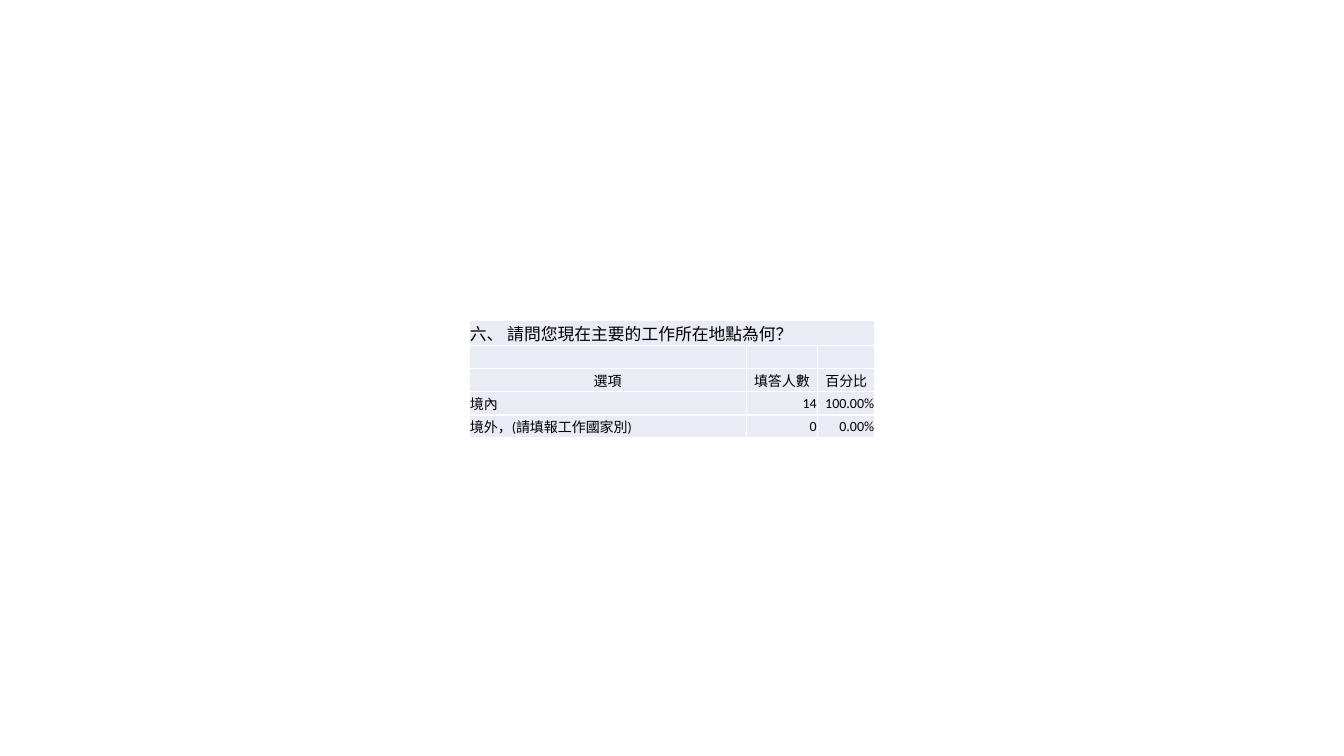
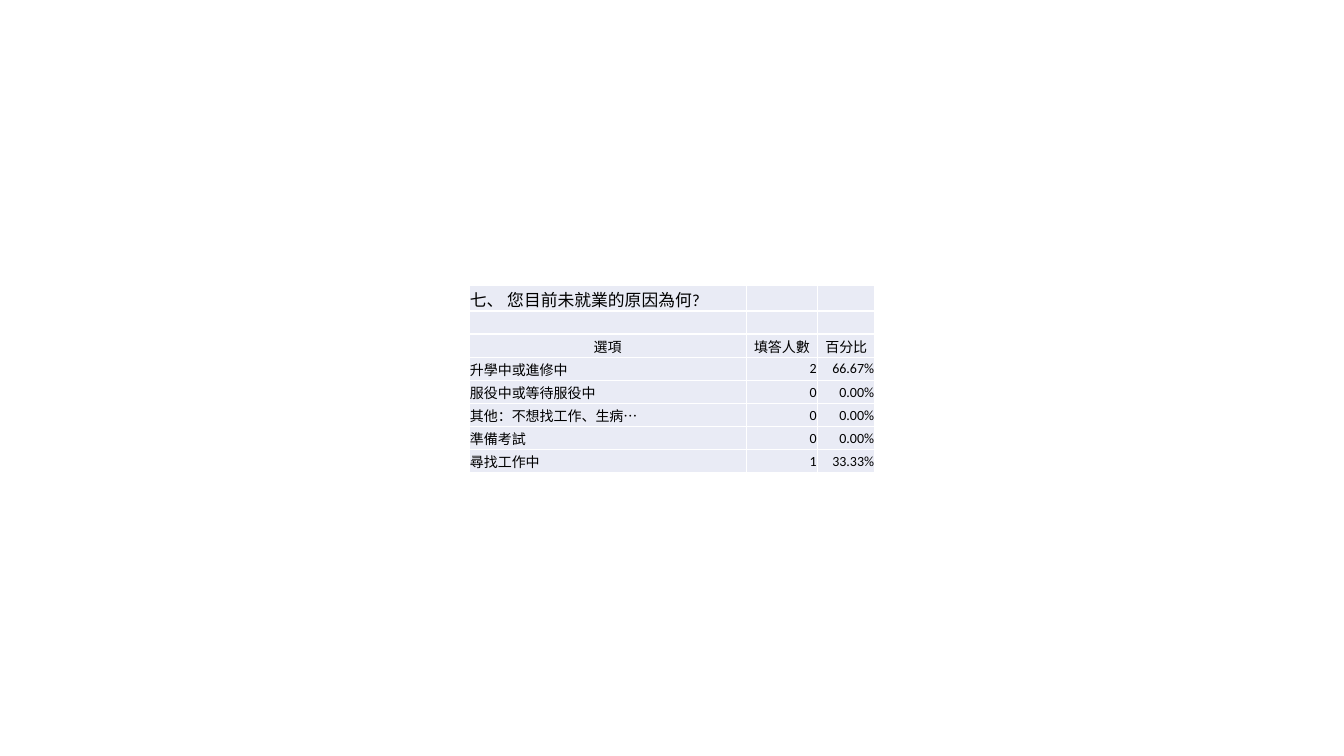
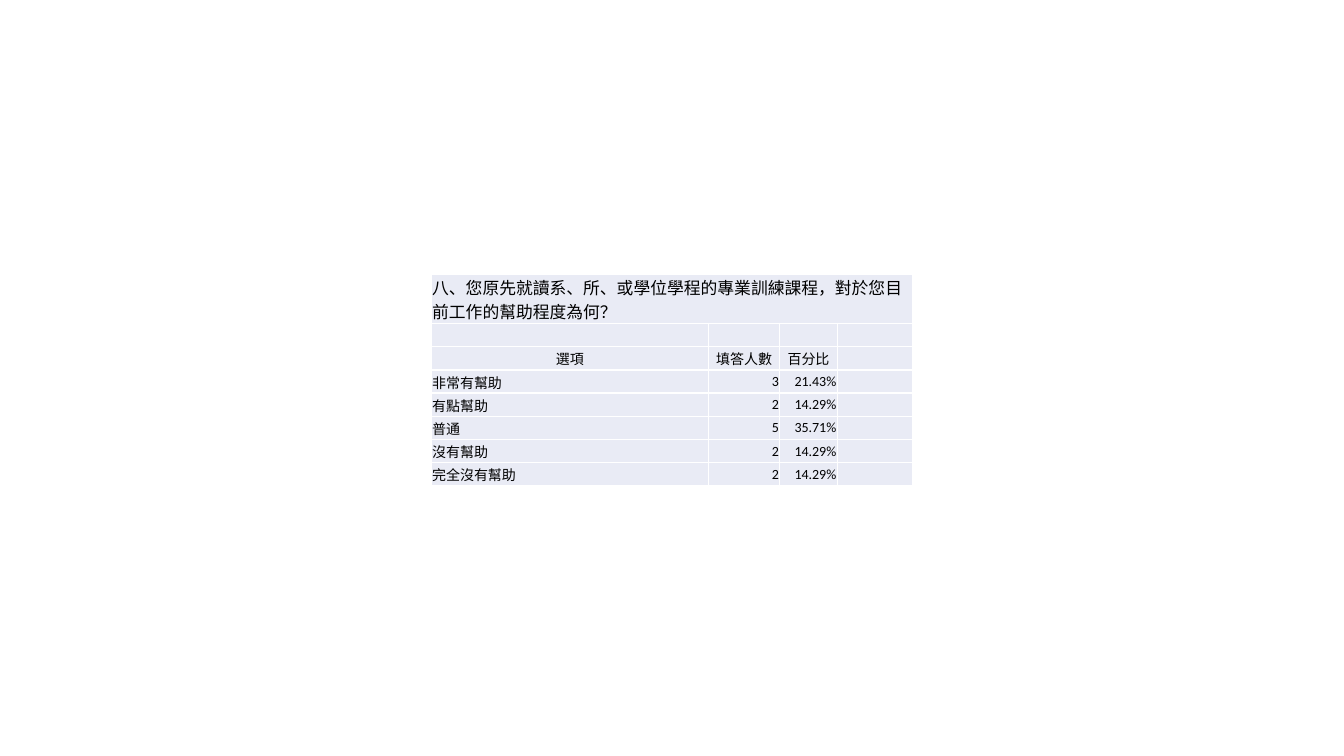
import dataclasses

import lxml.etree
import pptx
import pptx.dml.color
import pptx.enum.text
import pptx.oxml.ns
import pptx.presentation
import pptx.table
import pptx.util

Pt = pptx.util.Pt
Align = pptx.enum.text.PP_ALIGN
qn = pptx.oxml.ns.qn


# Shared look
@dataclasses.dataclass(frozen=True)
class Theme:
    font: str = "Calibri"
    ink: str = "000000"
    fill: str = "E9EBF5"
    rule: str = "FFFFFF"
    head: float = 12
    body: float = 10
    wide: float = 960
    high: float = 540
    row: float = 16.5


@dataclasses.dataclass(frozen=True)
class Survey:
    title: str
    votes: dict[str, int]
    cols: tuple[float, ...] = (198, 51, 41)
    lines: int = 1
    merge: bool = True


LOOK = Theme()
LABELS = ("選項", "填答人數", "百分比")
CELL = {
    "margin_left": Pt(0.7),
    "margin_right": Pt(0.7),
    "margin_top": Pt(0.7),
    "margin_bottom": Pt(0),
    "vertical_anchor": pptx.enum.text.MSO_ANCHOR.MIDDLE,
}

# Survey results
SURVEYS = (
    Survey(
        "六、 請問您現在主要的工作所在地點為何？",
        {"境內": 14, "境外，(請填報工作國家別)": 0},
    ),
    Survey(
        "七、 您目前未就業的原因為何?",
        {
            "升學中或進修中": 2,
            "服役中或等待服役中": 0,
            "其他：不想找工作、生病…": 0,
            "準備考試": 0,
            "尋找工作中": 1,
        },
        merge=False,
    ),
    Survey(
        "八、您原先就讀系、所、或學位學程的專業訓練課程，對於您目前工作的幫助程度為何？",
        {"非常有幫助": 3, "有點幫助": 2, "普通": 5, "沒有幫助": 2, "完全沒有幫助": 2},
        cols=(198, 51, 41, 54),
        lines=2,
    ),
)


def color(code: str) -> pptx.dml.color.RGBColor:
    return pptx.dml.color.RGBColor.from_string(code)


def frame(cell: pptx.table._Cell) -> None:
    """Give a cell its insets, borders and fill."""
    for name, value in CELL.items():
        setattr(cell, name, value)
    props = cell._tc.get_or_add_tcPr()
    for side in ("a:lnL", "a:lnR", "a:lnT", "a:lnB"):
        line = lxml.etree.SubElement(props, qn(side), w=str(Pt(1)))
        solid = lxml.etree.SubElement(line, qn("a:solidFill"))
        lxml.etree.SubElement(solid, qn("a:srgbClr"), val=LOOK.rule)
    cell.fill.solid()
    cell.fill.fore_color.rgb = color(LOOK.fill)


def write(cell: pptx.table._Cell, text: str, size: float, align: Align) -> None:
    para = cell.text_frame.paragraphs[0]
    if not text:
        # Keep empty rows as low as the others
        lxml.etree.SubElement(para._p, qn("a:endParaRPr"), sz=str(int(size * 100)))
        return
    para.alignment = align
    run = para.add_run()
    run.text = text
    for name, value in {"name": LOOK.font, "size": Pt(size), "bold": False}.items():
        setattr(run.font, name, value)
    run.font.color.rgb = color(LOOK.ink)


def grid(survey: Survey) -> list[tuple[str, ...]]:
    """Title, gap, labels, then one row per answer with its share."""
    total = sum(survey.votes.values())
    body = [(name, str(n), f"{n / total:.2%}") for name, n in survey.votes.items()]
    return [(survey.title,), (), LABELS, *body]


def draw(deck: pptx.presentation.Presentation, survey: Survey) -> None:
    slide = deck.slides.add_slide(deck.slide_layouts[6])
    rows = grid(survey)
    highs = [LOOK.row * survey.lines] + [LOOK.row] * (len(rows) - 1)
    wide, high = sum(survey.cols), sum(highs)

    # Centre the table on the slide
    table = slide.shapes.add_table(
        len(rows), len(survey.cols),
        Pt((LOOK.wide - wide) / 2), Pt((LOOK.high - high) / 2), Pt(wide), Pt(high),
    ).table
    table.first_row = table.horz_banding = False
    for col, size in zip(table.columns, survey.cols):
        col.width = Pt(size)
    for row, size in zip(table.rows, highs):
        row.height = Pt(size)

    # Fill the cells
    for r, texts in enumerate(rows):
        for c in range(len(survey.cols)):
            cell = table.cell(r, c)
            frame(cell)
            if r == 2:
                align = Align.CENTER
            else:
                align = Align.RIGHT if c else Align.LEFT
            size = LOOK.body if r or c else LOOK.head
            write(cell, texts[c] if c < len(texts) else "", size, align)
    if survey.merge:
        table.cell(0, 0).merge(table.cell(0, len(survey.cols) - 1))


def main() -> None:
    deck = pptx.Presentation()
    deck.slide_width, deck.slide_height = Pt(LOOK.wide), Pt(LOOK.high)
    for survey in SURVEYS:
        draw(deck, survey)
    deck.save("out.pptx")


if __name__ == "__main__":
    main()
